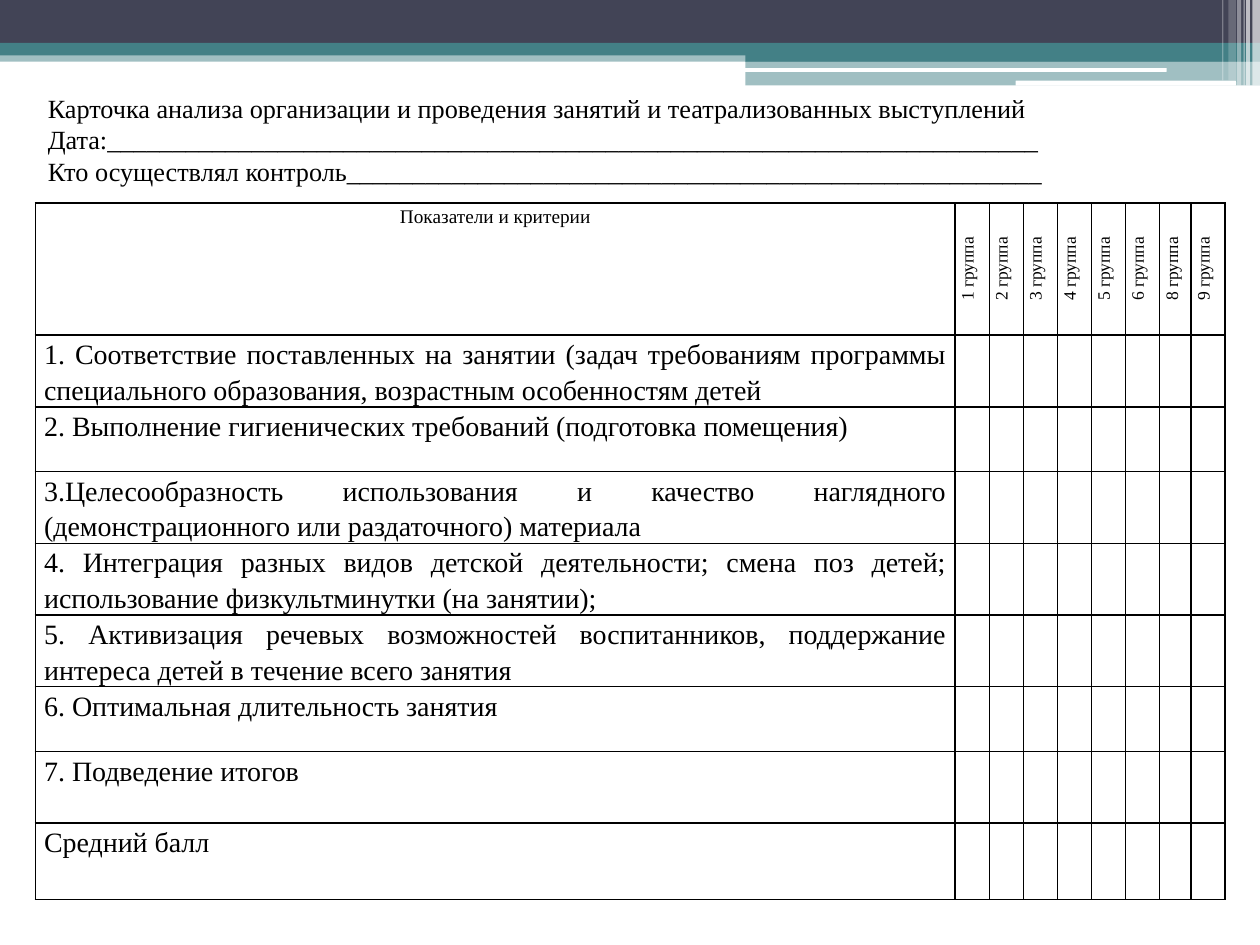
from typing import NamedTuple

import pptx
import pptx.dml.color
import pptx.enum.shapes
import pptx.enum.text
import pptx.oxml
import pptx.oxml.ns
import pptx.shapes.autoshape
import pptx.slide
import pptx.table
import pptx.util

Pt = pptx.util.Pt
Shape = pptx.enum.shapes.MSO_SHAPE
Align = pptx.enum.text.PP_ALIGN
Anchor = pptx.enum.text.MSO_ANCHOR

FONT = "Times New Roman"
BLACK, WHITE, NAVY, TEAL = "000000", "FFFFFF", "424456", "438086"


class Bar(NamedTuple):
    left: float
    top: float
    width: float
    height: float
    fill: str
    alpha: int = 100
    kind: int = Shape.RECTANGLE


class Row(NamedTuple):
    text: str
    height: float
    anchor: int = Anchor.TOP


BARS = [
    Bar(0, 28.8, 720, 6.5, TEAL, 50),
    Bar(0, 0, 720, 24.5, NAVY),
    Bar(0, 24.5, 720, 7.2, TEAL),
    Bar(426, 28, 294, 7.2, TEAL),
    Bar(426, 34.9, 294, 14, TEAL, 50),
    Bar(425.5, 38.9, 241.2, 2.2, WHITE, kind=Shape.ROUNDED_RECTANGLE),
    Bar(580.3, 46.1, 126, 2.9, WHITE, kind=Shape.ROUNDED_RECTANGLE),
    Bar(715.7, 0, 4.3, 49, WHITE, 65),
    Bar(712.1, 0, 2.2, 49, WHITE, 65),
    Bar(710.6, 0, 0.7, 49, WHITE, 60),
    Bar(707, 0, 2.2, 49, WHITE, 40),
    Bar(702, 0, 4.3, 46, WHITE, 20),
    Bar(698.4, 0, 0.7, 46, WHITE, 30),
]

TITLE = [
    "Карточка анализа организации и проведения занятий и театрализованных выступлений",
    "Дата:" + "_" * 71,
    "Кто осуществлял контроль" + "_" * 53,
]

HEAD = "Показатели и критерии"
HEAD_HIGH = 75.5
GROUPS = [1, 2, 3, 4, 5, 6, 8, 9]
WIDTHS = [525.6] + [19.5] * 6 + [18, 19.5]
ROWS = [
    Row("1. Соответствие поставленных на занятии (задач требованиям программы "
        "специального образования, возрастным особенностям детей", 41, Anchor.MIDDLE),
    Row("2. Выполнение гигиенических требований (подготовка помещения)", 37),
    Row("3.Целесообразность использования и качество наглядного "
        "(демонстрационного или раздаточного) материала", 41),
    Row("4. Интеграция разных видов детской деятельности; смена поз детей; "
        "использование физкультминутки (на занятии);", 41),
    Row("5. Активизация речевых возможностей воспитанников, поддержание "
        "интереса детей в течение всего занятия", 41),
    Row("6. Оптимальная длительность занятия", 37),
    Row("7. Подведение итогов", 41),
    Row("Средний балл", 43.5),
]


def color(code: str) -> pptx.dml.color.RGBColor:
    return pptx.dml.color.RGBColor.from_string(code)


def style(par, size: float, align: int, space) -> None:
    par.alignment = align
    par.line_spacing = space
    par.font.size = Pt(size)
    for run in par.runs:
        run.font.name = FONT
        run.font.size = Pt(size)
        run.font.color.rgb = color(BLACK)


def draw_bar(slide: pptx.slide.Slide, bar: Bar) -> None:
    shape = slide.shapes.add_shape(
        bar.kind, Pt(bar.left), Pt(bar.top), Pt(bar.width), Pt(bar.height))
    shape.shadow.inherit = False
    shape.line.fill.background()
    shape.fill.solid()
    shape.fill.fore_color.rgb = color(bar.fill)
    if bar.alpha < 100:
        tint = shape.fill._xPr.find(".//" + pptx.oxml.ns.qn("a:srgbClr"))
        tint.append(pptx.oxml.parse_xml(
            f'<a:alpha {pptx.oxml.ns.nsdecls("a")} val="{bar.alpha * 1000}"/>'))


def frame(cell: pptx.table._Cell) -> None:
    """Give a cell black borders, no fill and tight margins."""
    props = cell._tc.get_or_add_tcPr()
    for side in "LRTB":
        props.append(pptx.oxml.parse_xml(
            f'<a:ln{side} {pptx.oxml.ns.nsdecls("a")} w="{Pt(1)}"><a:solidFill>'
            f'<a:srgbClr val="{BLACK}"/></a:solidFill></a:ln{side}>'))
    cell.fill.background()
    cell.margin_left = cell.margin_right = Pt(5)
    cell.margin_top = cell.margin_bottom = Pt(0)


def write(cell: pptx.table._Cell, text: str, size: float, align: int) -> None:
    cell.text_frame.text = text
    style(cell.text_frame.paragraphs[0], size, align, 1.15)


def draw_grid(slide: pptx.slide.Slide) -> None:
    highs = [HEAD_HIGH] + [row.height for row in ROWS]
    grid = slide.shapes.add_table(
        len(highs), len(WIDTHS), Pt(20.2), Pt(116),
        Pt(sum(WIDTHS)), Pt(sum(highs))).table
    grid.first_row = grid.horz_banding = False
    for col, width in zip(grid.columns, WIDTHS):
        col.width = Pt(width)
    for line, high in zip(grid.rows, highs):
        line.height = Pt(high)
    for cell in grid.iter_cells():
        frame(cell)
        cell.text_frame.paragraphs[0].font.size = Pt(10)

    write(grid.cell(0, 0), HEAD, 11, Align.CENTER)
    for col, group in enumerate(GROUPS, 1):
        cell = grid.cell(0, col)
        write(cell, f"{group} группа", 10, Align.CENTER)
        cell._tc.tcPr.set("vert", "vert270")
    for index, row in enumerate(ROWS, 1):
        cell = grid.cell(index, 0)
        write(cell, row.text, 16, Align.JUSTIFY)
        cell.vertical_anchor = row.anchor


def draw_title(slide: pptx.slide.Slide) -> None:
    box = slide.shapes.add_textbox(Pt(20.2), Pt(49), Pt(697.7), Pt(134.6))
    text = box.text_frame
    text.word_wrap = True
    text.vertical_anchor = Anchor.TOP
    text.text = "\n".join(TITLE)
    for par in text.paragraphs:
        style(par, 15, Align.JUSTIFY, Pt(18))


def main() -> None:
    deck = pptx.Presentation()
    deck.slide_width, deck.slide_height = Pt(720), Pt(540)
    slide = deck.slides.add_slide(deck.slide_layouts[6])
    for bar in BARS:
        draw_bar(slide, bar)
    draw_grid(slide)
    draw_title(slide)
    deck.save("out.pptx")


if __name__ == "__main__":
    main()
